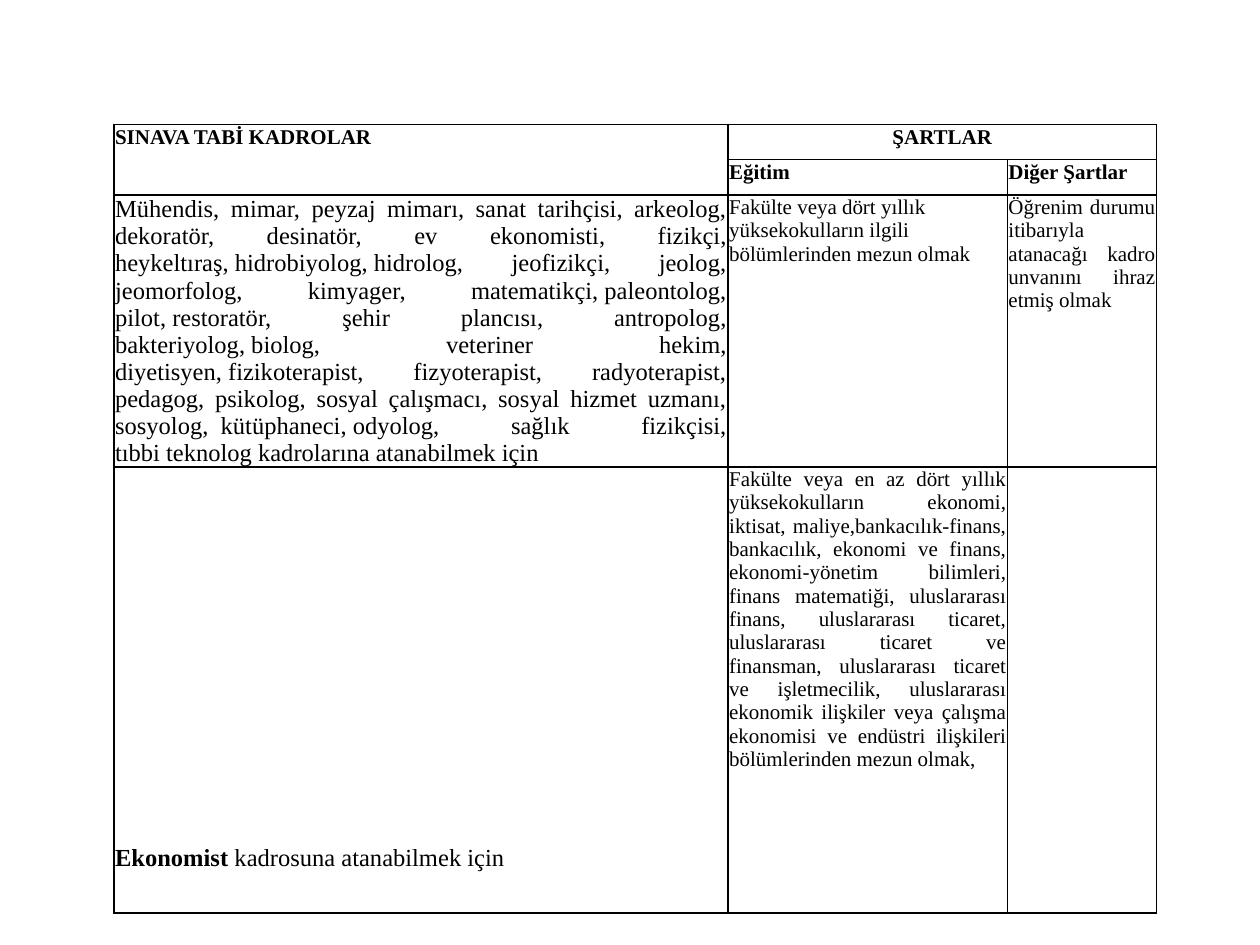
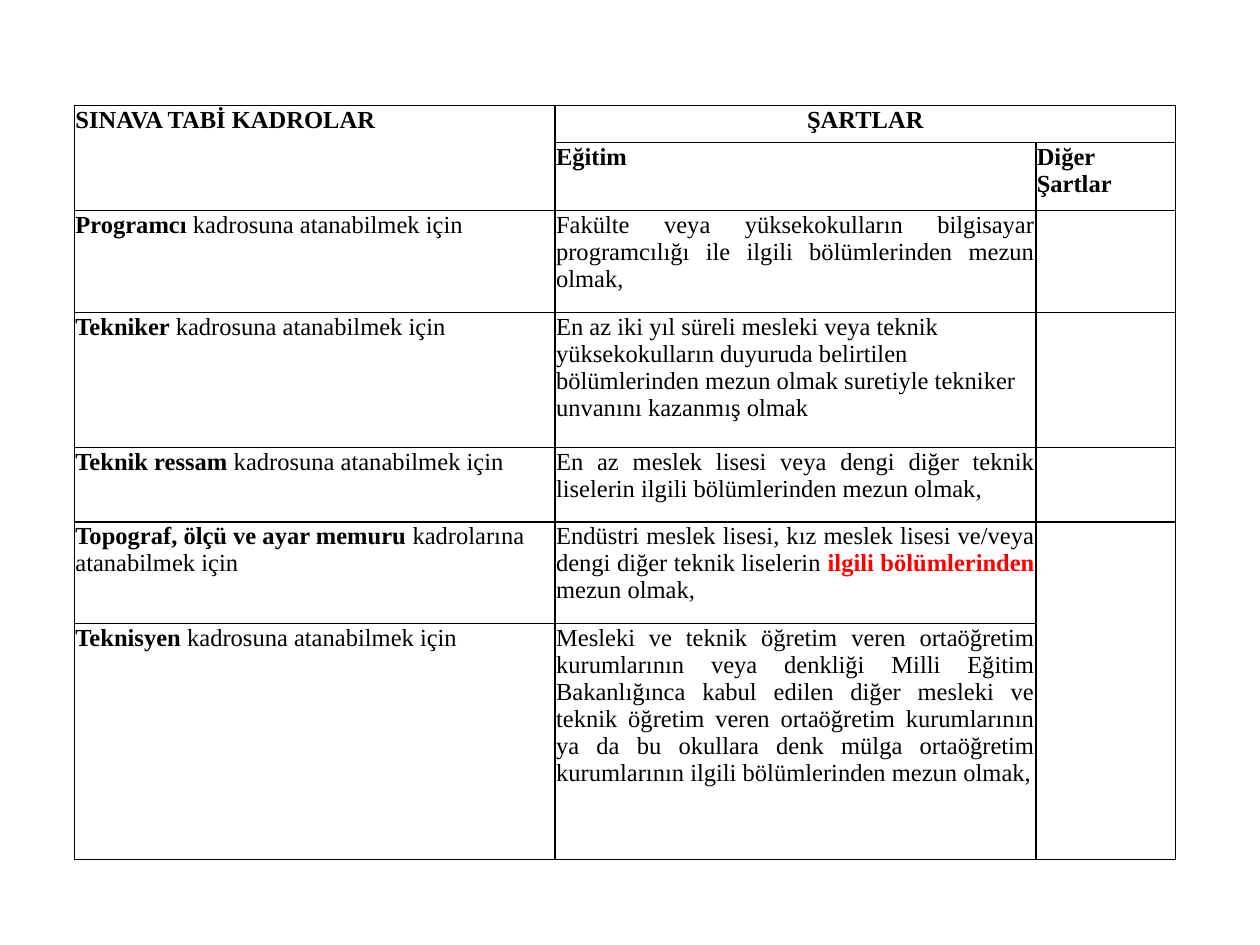
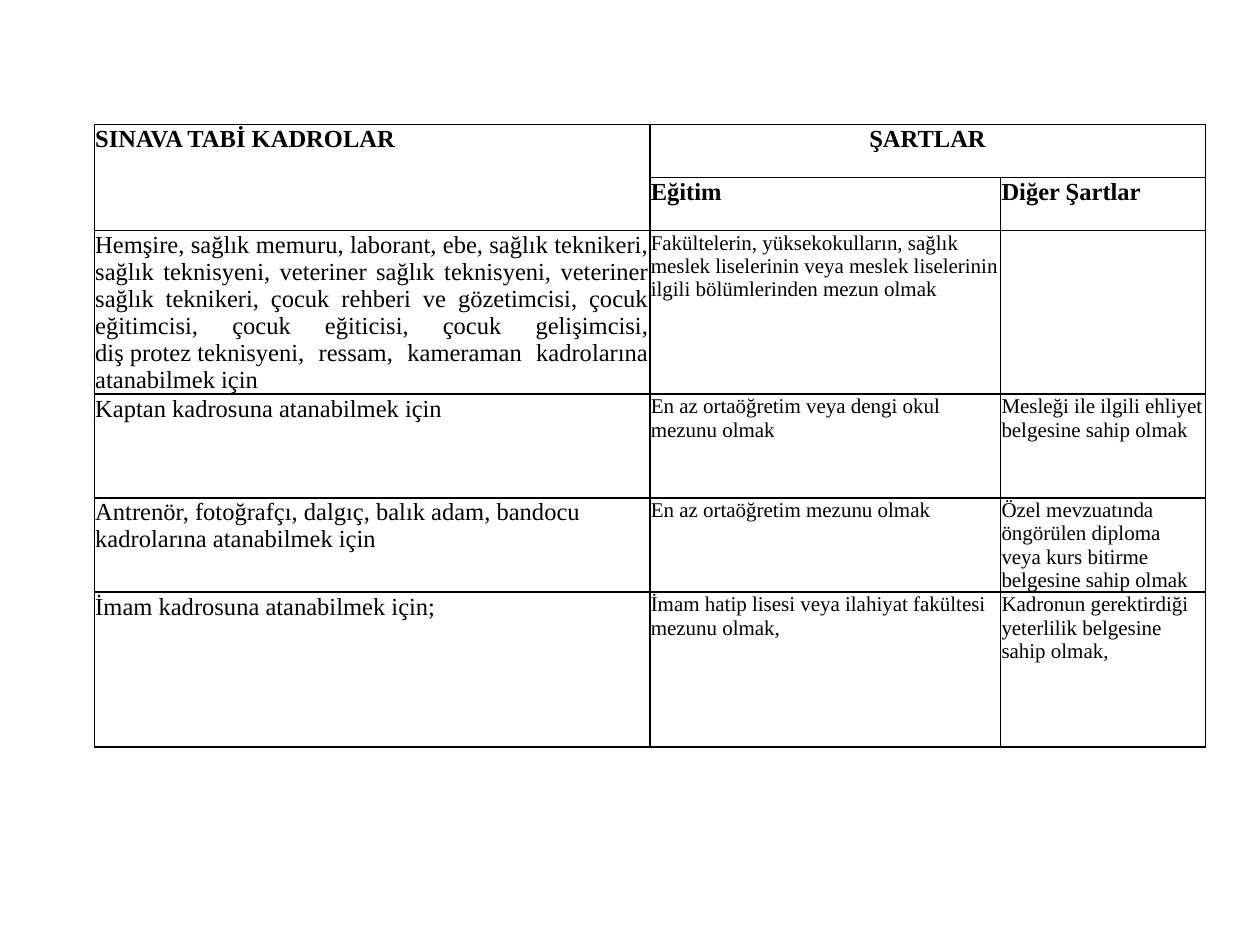
from lxml import etree
from pptx import Presentation
from pptx.dml.color import RGBColor
from pptx.enum.text import MSO_ANCHOR, PP_ALIGN
from pptx.oxml.ns import qn
from pptx.util import Cm, Pt

LEFT, CENTER, JUSTIFY = PP_ALIGN.LEFT, PP_ALIGN.CENTER, PP_ALIGN.JUSTIFY
TOP = MSO_ANCHOR.TOP

COLORS = {"text": "000000", "border": "000000", "highlight": "FF0000"}
FONT = "Times New Roman"
BORDER_WIDTH = Pt(1)
INSET = Cm(0.02)
NO_BREAK_SPACE = chr(160)
HEADER_MERGES = [(0, 0, 1, 0), (0, 1, 0, 2)]

# Each entry: (row, column, alignment, size, [(text, style), ...])
# A "~" in a text stands for a no-break space.
# "open_below" lists cells with no line between them and the cell beneath.
pages = [
    {
        "origin": (2.3, 2.51),
        "columns": [12.38, 5.63, 3.0],
        "rows": [0.71, 0.71, 5.47, 6.91, 0.69, 0.69, 0.71],
        "header_size": 12,
        "merges": [(3, 1, 6, 1), (3, 2, 6, 2)],
        "open_below": [(3, 0), (4, 0), (5, 0)],
        "entries": [
            (2, 0, JUSTIFY, 14, [(
                "Mühendis, mimar, peyzaj mimarı, sanat tarihçisi, arkeolog, "
                "dekoratör, desinatör, ev ekonomisti, fizikçi, "
                "heykeltıraş,~hidrobiyolog,~hidrolog, jeofizikçi, jeolog, "
                "jeomorfolog, kimyager, matematikçi,~paleontolog, "
                "pilot,~restoratör, şehir plancısı, antropolog, "
                "bakteriyolog,~biolog, veteriner hekim, "
                "diyetisyen,~fizikoterapist, fizyoterapist, radyoterapist, "
                "pedagog, psikolog, sosyal çalışmacı, sosyal hizmet uzmanı, "
                "sosyolog,~~kütüphaneci,~odyolog, sağlık fizikçisi, "
                "tıbbi~teknolog~kadrolarına atanabilmek için", "plain")]),
            (2, 1, LEFT, 12, [(
                "Fakülte veya dört yıllık yüksekokulların ilgili "
                "bölümlerinden mezun olmak", "plain")]),
            (2, 2, JUSTIFY, 12, [(
                "Öğrenim durumu itibarıyla atanacağı kadro unvanını "
                "ihraz etmiş olmak", "plain")]),
            (3, 1, JUSTIFY, 12, [(
                "Fakülte veya en az dört yıllık yüksekokulların ekonomi, "
                "iktisat, maliye,bankacılık-finans, bankacılık, ekonomi ve "
                "finans, ekonomi-yönetim bilimleri, finans matematiği, "
                "uluslararası finans, uluslararası ticaret, uluslararası "
                "ticaret ve finansman, uluslararası ticaret ve işletmecilik, "
                "uluslararası ekonomik ilişkiler veya çalışma ekonomisi ve "
                "endüstri ilişkileri bölümlerinden mezun olmak,", "plain")]),
            (5, 0, LEFT, 14, [("Ekonomist", "bold"),
                              (" kadrosuna atanabilmek için", "plain")]),
        ],
    },
    {
        "origin": (1.5, 2.13),
        "columns": [9.69, 9.69, 2.82],
        "rows": [0.74, 1.37, 2.06, 2.72, 1.5, 2.05, 4.76],
        "header_size": 14,
        "merges": [],
        "open_below": [(5, 2)],
        "entries": [
            (2, 0, LEFT, 14, [("Programcı ", "bold"),
                              ("kadrosuna atanabilmek için", "plain")]),
            (2, 1, JUSTIFY, 14, [(
                "Fakülte veya yüksekokulların bilgisayar programcılığı ile "
                "ilgili bölümlerinden mezun olmak,", "plain")]),
            (3, 0, LEFT, 14, [("Tekniker ", "bold"),
                              ("kadrosuna atanabilmek için", "plain")]),
            (3, 1, LEFT, 14, [(
                "En az iki yıl süreli mesleki veya teknik yüksekokulların "
                "duyuruda belirtilen bölümlerinden mezun olmak suretiyle "
                "tekniker unvanını kazanmış olmak", "plain")]),
            (4, 0, LEFT, 14, [("Teknik ressam", "bold"),
                              (" kadrosuna atanabilmek için", "plain")]),
            (4, 1, JUSTIFY, 14, [(
                "En az meslek lisesi veya dengi diğer teknik liselerin "
                "ilgili bölümlerinden mezun olmak,", "plain")]),
            (5, 0, LEFT, 14, [("Topograf, ölçü ve ayar memuru", "bold"),
                              (" kadrolarına atanabilmek için", "plain")]),
            (5, 1, JUSTIFY, 14, [
                ("Endüstri meslek lisesi, kız meslek lisesi ve/veya dengi "
                 "diğer teknik liselerin ", "plain"),
                ("ilgili bölümlerinden", "highlight"),
                (" mezun olmak,", "plain")]),
            (6, 0, LEFT, 14, [("Teknisyen", "bold"),
                              (" kadrosuna atanabilmek için", "plain")]),
            (6, 1, JUSTIFY, 14, [(
                "Mesleki ve teknik öğretim veren ortaöğretim kurumlarının "
                "veya denkliği Milli Eğitim Bakanlığınca kabul edilen diğer "
                "mesleki ve teknik öğretim veren ortaöğretim kurumlarının "
                "ya da bu okullara denk mülga ortaöğretim kurumlarının "
                "ilgili bölümlerinden mezun olmak,", "plain")]),
        ],
    },
    {
        "origin": (1.9, 2.51),
        "columns": [11.2, 7.07, 4.13],
        "rows": [1.07, 1.07, 3.28, 2.09, 1.89, 3.12],
        "header_size": 14,
        "merges": [],
        "open_below": [],
        "entries": [
            (2, 0, JUSTIFY, 14, [(
                "Hemşire, sağlık memuru, laborant, ebe, sağlık teknikeri, "
                "sağlık teknisyeni, veteriner sağlık teknisyeni, veteriner "
                "sağlık teknikeri, çocuk rehberi ve gözetimcisi, çocuk "
                "eğitimcisi, çocuk eğiticisi, çocuk gelişimcisi, "
                "diş~protez~teknisyeni, ressam, kameraman kadrolarına "
                "atanabilmek için", "plain")]),
            (2, 1, LEFT, 12, [(
                "Fakültelerin, yüksekokulların, sağlık meslek liselerinin "
                "veya meslek liselerinin ilgili bölümlerinden mezun olmak",
                "plain")]),
            (3, 0, LEFT, 14, [("Kaptan kadrosuna atanabilmek için", "plain")]),
            (3, 1, LEFT, 12, [(
                "En az ortaöğretim veya dengi okul mezunu olmak", "plain")]),
            (3, 2, LEFT, 12, [(
                "Mesleği ile ilgili ehliyet belgesine sahip olmak", "plain")]),
            (4, 0, LEFT, 14, [(
                "Antrenör, fotoğrafçı, dalgıç, balık adam, bandocu "
                "kadrolarına atanabilmek için", "plain")]),
            (4, 1, LEFT, 12, [("En az ortaöğretim mezunu olmak", "plain")]),
            (4, 2, LEFT, 12, [(
                "Özel mevzuatında öngörülen diploma veya kurs bitirme "
                "belgesine sahip olmak", "plain")]),
            (5, 0, LEFT, 14, [("İmam kadrosuna atanabilmek için;", "plain")]),
            (5, 1, LEFT, 12, [(
                "İmam hatip lisesi veya ilahiyat fakültesi mezunu olmak,",
                "plain")]),
            (5, 2, LEFT, 12, [(
                "Kadronun gerektirdiği yeterlilik belgesine sahip olmak,",
                "plain")]),
        ],
    },
]


def format_cell(cell, hidden_sides):
    """Set insets, borders and an empty fill; hidden_sides get no line."""
    cell.margin_left = cell.margin_right = cell.margin_top = INSET
    cell.margin_bottom = 0
    cell.vertical_anchor = TOP
    properties = cell._tc.get_or_add_tcPr()
    for side in "LRTB":
        line = etree.SubElement(properties, qn(f"a:ln{side}"), w=str(BORDER_WIDTH))
        if side in hidden_sides:
            etree.SubElement(line, qn("a:noFill"))
        else:
            fill = etree.SubElement(line, qn("a:solidFill"))
            etree.SubElement(fill, qn("a:srgbClr"), val=COLORS["border"])
    cell.fill.background()


def write_cell(cell, alignment, size, runs):
    paragraph = cell.text_frame.paragraphs[0]
    paragraph.alignment = alignment
    for text, style in runs:
        run = paragraph.add_run()
        run.text = text.replace("~", NO_BREAK_SPACE)
        run.font.name = FONT
        run.font.size = Pt(size)
        run.font.bold = style != "plain"
        color = COLORS["highlight" if style == "highlight" else "text"]
        run.font.color.rgb = RGBColor.from_string(color)


prs = Presentation()
prs.slide_width, prs.slide_height = Cm(25.4), Cm(19.05)
blank_layout = prs.slide_layouts[6]

for page in pages:
    slide = prs.slides.add_slide(blank_layout)
    widths, heights = page["columns"], page["rows"]
    left, top = page["origin"]
    table = slide.shapes.add_table(
        len(heights), len(widths), Cm(left), Cm(top),
        Cm(sum(widths)), Cm(sum(heights))).table
    table.first_row = table.horz_banding = False
    for column, width in zip(table.columns, widths):
        column.width = Cm(width)
    for row, height in zip(table.rows, heights):
        row.height = Cm(height)

    for r in range(len(heights)):
        for c in range(len(widths)):
            hidden_sides = ""
            if (r, c) in page["open_below"]:
                hidden_sides += "B"
            if (r - 1, c) in page["open_below"]:
                hidden_sides += "T"
            format_cell(table.cell(r, c), hidden_sides)

    for r1, c1, r2, c2 in HEADER_MERGES + page["merges"]:
        table.cell(r1, c1).merge(table.cell(r2, c2))

    headings = [(0, 0, LEFT, "SINAVA TABİ KADROLAR"), (0, 1, CENTER, "ŞARTLAR"),
                (1, 1, LEFT, "Eğitim"), (1, 2, LEFT, "Diğer Şartlar")]
    for r, c, alignment, heading in headings:
        write_cell(table.cell(r, c), alignment, page["header_size"], [(heading, "bold")])
    for r, c, alignment, size, runs in page["entries"]:
        write_cell(table.cell(r, c), alignment, size, runs)

    # Empty cells need a small text size so that low rows keep their height.
    for cell in table.iter_cells():
        if not cell.text_frame.text:
            paragraph = cell.text_frame.paragraphs[0]
            etree.SubElement(paragraph._p, qn("a:endParaRPr"), sz="1200")

prs.save("out.pptx")
